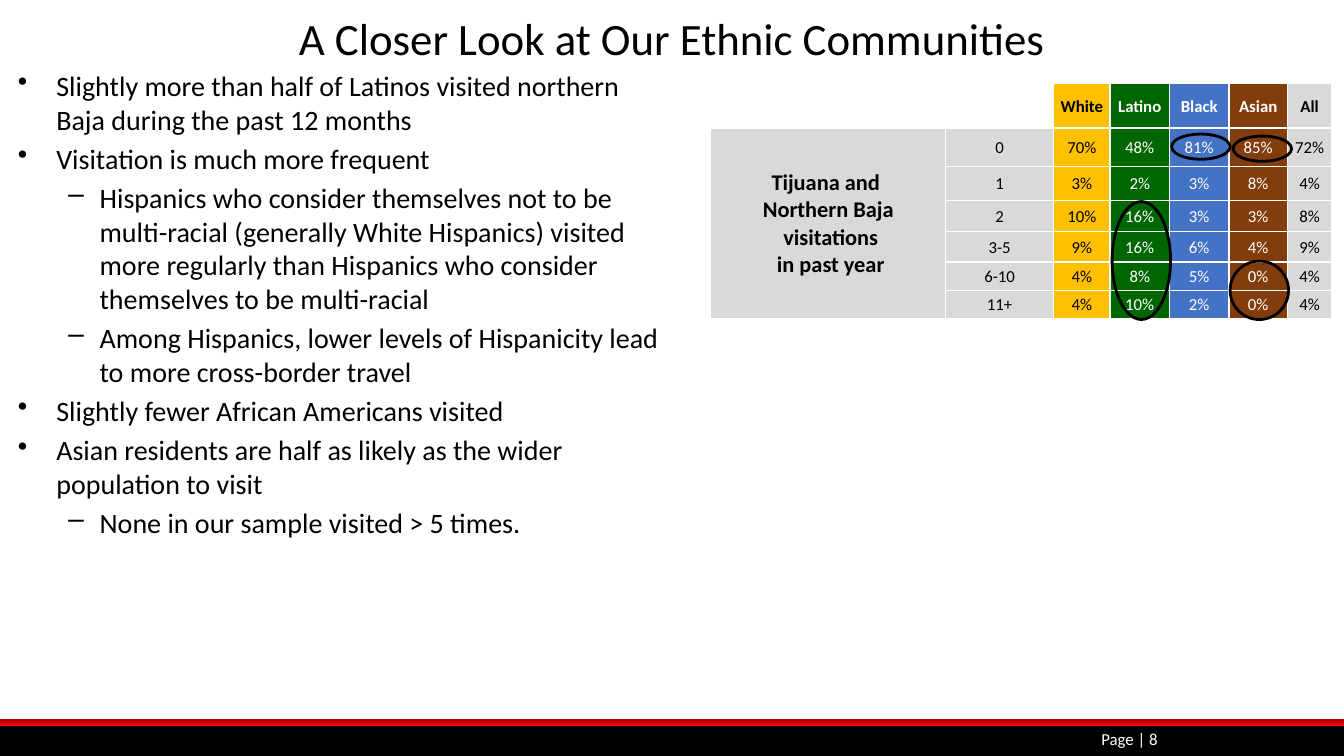
from pptx import Presentation
from pptx.dml.color import RGBColor
from pptx.enum.shapes import MSO_SHAPE as SHAPE
from pptx.enum.text import MSO_ANCHOR as ANCHOR, PP_ALIGN as ALIGN
from pptx.oxml.ns import qn
from pptx.util import Inches, Pt
from lxml.etree import SubElement, Element

BLACK = RGBColor(0x00, 0x00, 0x00)
WHITE = RGBColor(0xFF, 0xFF, 0xFF)
GOLD = RGBColor(0xFF, 0xC0, 0x00)
GREEN = RGBColor(0x00, 0x66, 0x00)
BLUE = RGBColor(0x44, 0x72, 0xC4)
BROWN = RGBColor(0x83, 0x3C, 0x0C)
GREY = RGBColor(0xD9, 0xD9, 0xD9)
DARK_RED = RGBColor(0x97, 0x00, 0x00)
RED = RGBColor(0xFF, 0x00, 0x00)


def write(paragraph, text, size, color=BLACK, align=ALIGN.LEFT, bold=False):
    paragraph.text = text
    paragraph.alignment = align
    font = paragraph.font
    font.name, font.size, font.bold = "Calibri", Pt(size), bold
    font.color.rgb = color


def add_text_frame(left, top, width, height, anchor=ANCHOR.MIDDLE):
    box = slide.shapes.add_textbox(Inches(left), Inches(top), Inches(width), Inches(height))
    frame = box.text_frame
    frame.word_wrap = True
    frame.vertical_anchor = anchor
    return frame


prs = Presentation()
prs.slide_width, prs.slide_height = Inches(13.33), Inches(7.5)
slide = prs.slides.add_slide(prs.slide_layouts[6])

# Footer bars
footer = slide.shapes.add_shape(SHAPE.RECTANGLE, 0, Inches(7.19), Inches(13.33), Inches(0.31))
footer.fill.solid()
footer.fill.fore_color.rgb = BLACK
stripe = slide.shapes.add_shape(SHAPE.RECTANGLE, Inches(-0.02), Inches(7.13), Inches(13.35), Inches(0.07))
stripe.fill.gradient()
stripe.fill.gradient_angle = 270
for stop, color in zip(stripe.fill.gradient_stops, (DARK_RED, RED)):
    stop.color.rgb = color
for stop, position in zip(stripe.fill.gradient_stops, (0, 1)):
    stop.position = position
for bar in (footer, stripe):
    bar.line.fill.background()
    bar.shadow.inherit = False

# Visitation table
columns = [  # heading, fill, text colour, values
    ("White", GOLD, BLACK, ["70%", "3%", "10%", "9%", "4%", "4%"]),
    ("Latino", GREEN, WHITE, ["48%", "2%", "16%", "16%", "8%", "10%"]),
    ("Black", BLUE, WHITE, ["81%", "3%", "3%", "6%", "5%", "2%"]),
    ("Asian", BROWN, WHITE, ["85%", "8%", "3%", "4%", "0%", "0%"]),
    ("All", GREY, BLACK, ["72%", "4%", "8%", "9%", "4%", "4%"]),
]
visit_counts = ["0", "1", "2", "3-5", "6-10", "11+"]
visits = slide.shapes.add_table(
    7, 7, Inches(7.05), Inches(0.83), Inches(6.18), Inches(2.33)).table
visits.first_row = visits.horz_banding = False
for column, width in zip(visits.columns, (2.33, 1.07, 0.56, 0.59, 0.59, 0.58, 0.44)):
    column.width = Inches(width)
for row, height in zip(visits.rows, (0.44, 0.38, 0.34, 0.31, 0.3, 0.28, 0.28)):
    row.height = Inches(height)

for cell in visits.iter_cells():
    cell.vertical_anchor = ANCHOR.MIDDLE
    cell.margin_left = cell.margin_right = cell.margin_top = Inches(0.01)
    cell.margin_bottom = 0
    cell.fill.solid()
    cell.fill.fore_color.rgb = GREY
    for index, side in enumerate(("a:lnL", "a:lnR", "a:lnT", "a:lnB")):
        border = Element(qn(side), w=str(Pt(1)))
        SubElement(SubElement(border, qn("a:solidFill")), qn("a:srgbClr"), val=str(WHITE))
        cell._tc.get_or_add_tcPr().insert(index, border)

visits.cell(0, 0).merge(visits.cell(0, 1))
for c in range(2):
    visits.cell(0, c).fill.background()
visits.cell(1, 0).merge(visits.cell(6, 0))
label = visits.cell(1, 0).text_frame
for i, line in enumerate(["Tijuana and ", "Northern Baja", " visitations", " in past year"]):
    paragraph = label.add_paragraph() if i else label.paragraphs[0]
    write(paragraph, line, 16, align=ALIGN.CENTER, bold=True)
for r, count in enumerate(visit_counts, start=1):
    write(visits.cell(r, 1).text_frame.paragraphs[0], count, 12, align=ALIGN.CENTER)
for c, (heading, fill, color, values) in enumerate(columns, start=2):
    for r, text in enumerate([heading] + values):
        cell = visits.cell(r, c)
        cell.fill.fore_color.rgb = fill
        write(cell.text_frame.paragraphs[0], text, 12, color, ALIGN.CENTER, bold=r == 0)

# Findings: level and text
findings = [
    (0, "Slightly more than half of Latinos visited northern Baja during the past 12 months"),
    (0, "Visitation is much more frequent"),
    (1, "Hispanics who consider themselves not to be multi-racial (generally White Hispanics) "
        "visited more regularly than Hispanics who consider themselves to be multi-racial"),
    (1, "Among Hispanics, lower levels of Hispanicity lead to more cross-border travel"),
    (0, "Slightly fewer African Americans visited"),
    (0, "Asian residents are half as likely as the wider population to visit"),
    (1, "None in our sample visited > 5 times."),
]
bullet_styles = [("•", 0.38, -0.38), ("–", 0.81, -0.31)]
body = add_text_frame(0.08, 0.63, 6.69, 5.37, ANCHOR.TOP)
for i, (level, text) in enumerate(findings):
    paragraph = body.add_paragraph() if i else body.paragraphs[0]
    write(paragraph, text, 20)
    paragraph.level = level
    paragraph.space_before = Pt(4)
    bullet, margin, indent = bullet_styles[level]
    properties = paragraph._p.get_or_add_pPr()
    properties.set("marL", str(Inches(margin)))
    properties.set("indent", str(Inches(indent)))
    mark = Element(qn("a:buChar"), char=bullet)
    properties.find(qn("a:defRPr")).addprevious(mark)

# Page number and title
page = add_text_frame(9.25, 7.2, 2.33, 0.25)
write(page.paragraphs[0], "Page | 8", 12, WHITE, ALIGN.RIGHT)
title = add_text_frame(0.08, 0.05, 13.17, 0.64)
write(title.paragraphs[0], "A Closer Look at Our Ethnic Communities", 32, align=ALIGN.CENTER)

# Rings around the notable values
for left, top, height in [(12.23, 1.35, 0.25), (11.62, 1.33, 0.25),
                          (11.03, 2, 1.17), (12.2, 2.59, 0.58)]:
    ring = slide.shapes.add_shape(
        SHAPE.OVAL, Inches(left), Inches(top), Inches(0.58), Inches(height))
    ring.fill.background()
    ring.line.color.rgb = BLACK
    ring.line.width = Pt(2)
    ring.shadow.inherit = False

prs.save("out.pptx")
